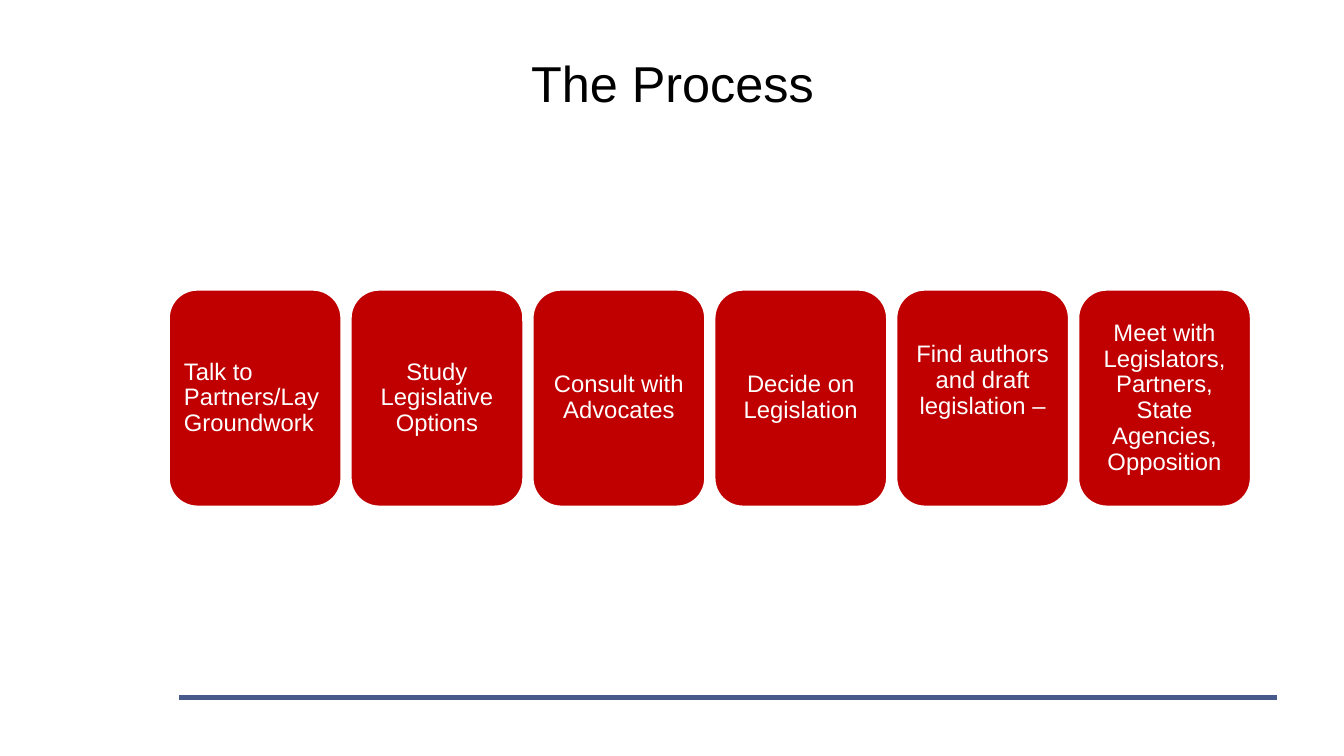
from dataclasses import dataclass

import pptx
import pptx.dml.color
import pptx.enum.shapes
import pptx.enum.text
import pptx.oxml.ns
import pptx.presentation
import pptx.slide
import pptx.text.text
import pptx.util
from lxml import etree

Inches = pptx.util.Inches
Pt = pptx.util.Pt
RGBColor = pptx.dml.color.RGBColor
Align = pptx.enum.text.PP_ALIGN


@dataclass(frozen=True)
class Theme:
    font: str = "Arial"
    title_size: int = 36
    step_size: int = 17
    title_color: RGBColor = RGBColor(0x00, 0x00, 0x00)
    step_fill: RGBColor = RGBColor(0xC0, 0x00, 0x00)
    white: RGBColor = RGBColor(0xFF, 0xFF, 0xFF)
    rule_color: RGBColor = RGBColor(0x46, 0x5A, 0x8C)


@dataclass(frozen=True)
class Step:
    text: str
    alignment: Align = Align.CENTER
    bottom_inset: float = 0.07


THEME = Theme()
STEPS = [
    Step("Talk to Partners/Lay Groundwork", alignment=Align.LEFT),
    Step("Study Legislative Options"),
    Step("Consult with Advocates"),
    Step("Decide on Legislation"),
    Step("Find authors and draft legislation –", bottom_inset=0.41),
    Step("Meet with Legislators, Partners, State Agencies, Opposition"),
]
FIRST_LEFT, LAST_LEFT = 1.67, 10.69
STEP_PITCH = (LAST_LEFT - FIRST_LEFT) / (len(STEPS) - 1)
STEP_TOP, STEP_WIDTH, STEP_HEIGHT = 2.87, 1.72, 2.16
INSET = 0.07


def add_run(paragraph: pptx.text.text._Paragraph, text: str, size: int, color: RGBColor) -> None:
    run = paragraph.add_run()
    run.text = text
    run.font.name = THEME.font
    run.font.size = Pt(size)
    run.font.color.rgb = color


def add_rule(slide: pptx.slide.Slide) -> None:
    rule = slide.shapes.add_connector(
        pptx.enum.shapes.MSO_CONNECTOR.STRAIGHT,
        Inches(1.78), Inches(6.92), Inches(12.67), Inches(6.92),
    )
    rule.line.color.rgb = THEME.rule_color
    rule.line.width = Pt(3)
    properties = rule._element.spPr
    etree.SubElement(properties, pptx.oxml.ns.qn("a:effectLst"))


def format_title(slide: pptx.slide.Slide) -> None:
    title = slide.shapes.title
    title.left, title.top = Inches(0.67), Inches(0.3)
    title.width, title.height = Inches(12), Inches(1.03)
    title.text_frame.vertical_anchor = pptx.enum.text.MSO_ANCHOR.MIDDLE
    paragraph = title.text_frame.paragraphs[0]
    paragraph.alignment = Align.CENTER
    add_run(paragraph, "The Process", THEME.title_size, THEME.title_color)


def add_step(slide: pptx.slide.Slide, step: Step, left: float) -> None:
    shape = slide.shapes.add_shape(
        pptx.enum.shapes.MSO_SHAPE.ROUNDED_RECTANGLE,
        Inches(left), Inches(STEP_TOP), Inches(STEP_WIDTH), Inches(STEP_HEIGHT),
    )
    shape.shadow.inherit = False
    shape.fill.solid()
    shape.fill.fore_color.rgb = THEME.step_fill
    shape.line.color.rgb = THEME.white
    shape.line.width = Pt(2)
    frame = shape.text_frame
    frame.word_wrap = True
    frame.vertical_anchor = pptx.enum.text.MSO_ANCHOR.MIDDLE
    frame.margin_left = frame.margin_right = frame.margin_top = Inches(INSET)
    frame.margin_bottom = Inches(step.bottom_inset)
    paragraph = frame.paragraphs[0]
    paragraph.alignment = step.alignment
    paragraph.line_spacing = 0.9
    add_run(paragraph, step.text, THEME.step_size, THEME.white)


def main() -> None:
    presentation = pptx.Presentation()
    presentation.slide_width = Inches(13.33)
    presentation.slide_height = Inches(7.5)
    slide = presentation.slides.add_slide(presentation.slide_layouts.get_by_name("Title Only"))
    add_rule(slide)
    format_title(slide)
    for index, step in enumerate(STEPS):
        add_step(slide, step, FIRST_LEFT + index * STEP_PITCH)
    presentation.save("out.pptx")


if __name__ == "__main__":
    main()
